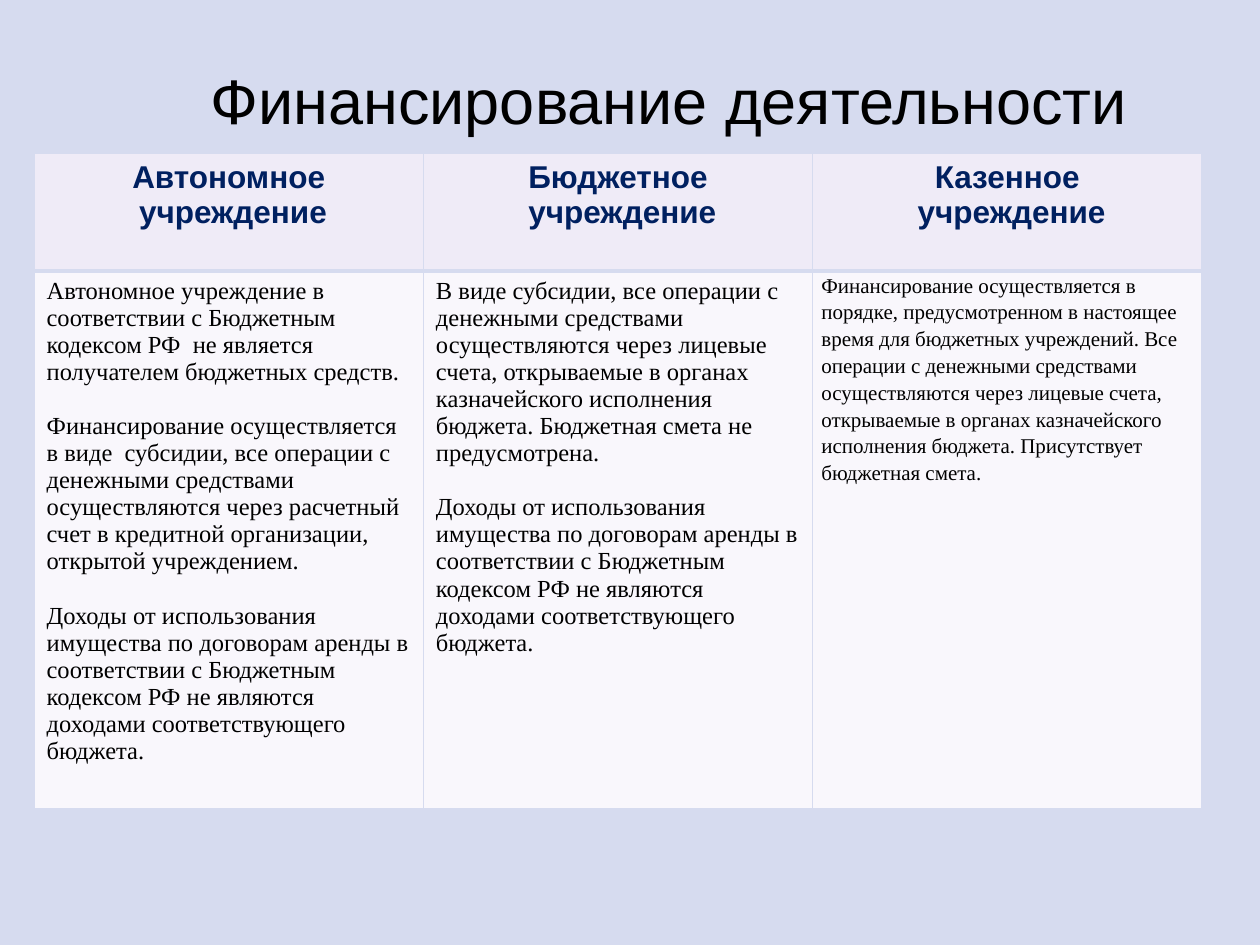
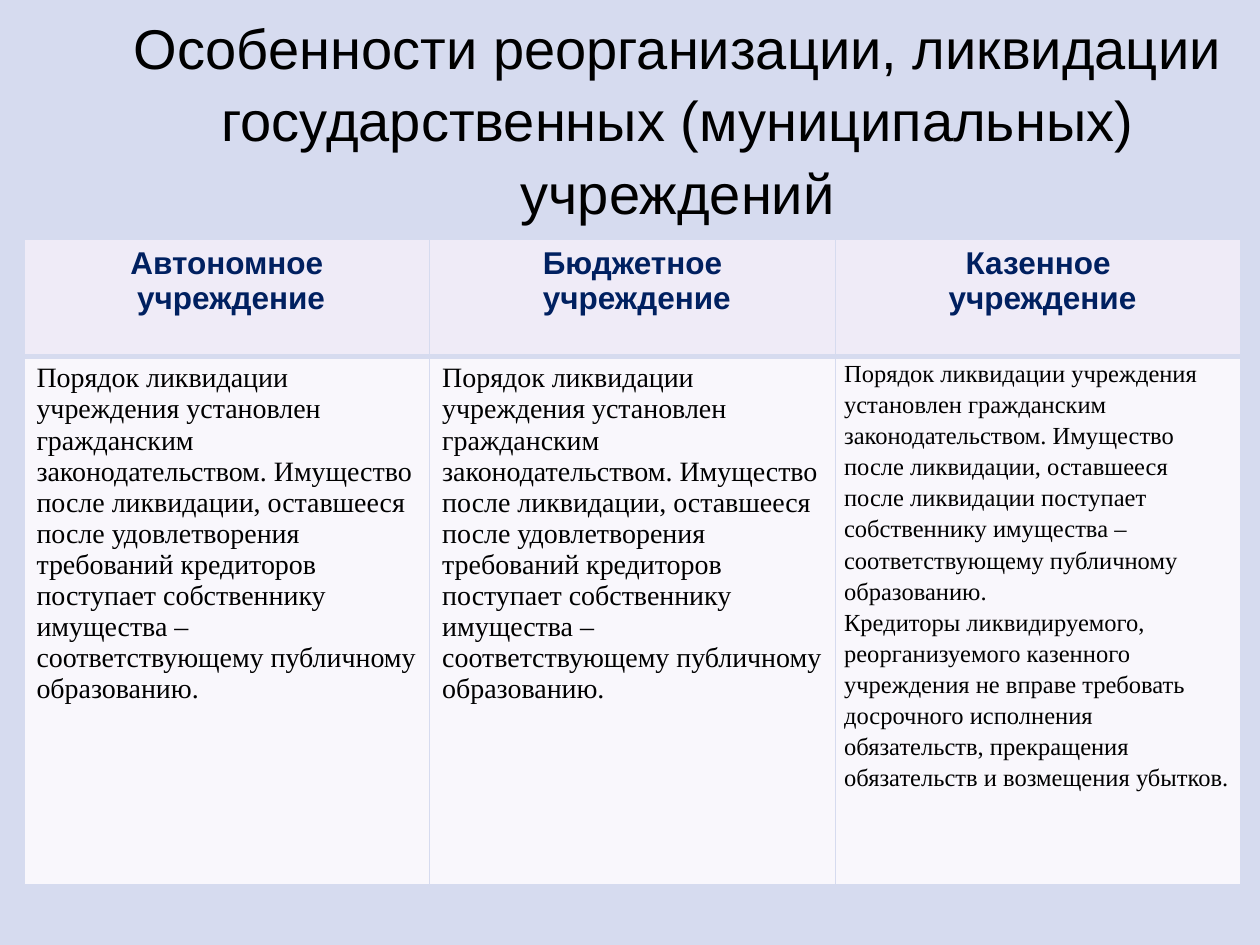
from lxml import etree
from pptx import Presentation
from pptx.dml.color import RGBColor
from pptx.enum.text import MSO_ANCHOR, PP_ALIGN
from pptx.oxml.ns import qn
from pptx.util import Inches, Pt

CENTER, LEFT = PP_ALIGN.CENTER, PP_ALIGN.LEFT
MIDDLE = MSO_ANCHOR.MIDDLE
BLANK_LAYOUT = 6
SLIDE_WIDTH, SLIDE_HEIGHT = Inches(10), Inches(7.5)
TITLE_LEFT, TITLE_TOP, TITLE_WIDTH = 0.88, 0.3, 9
HEADER_HEIGHT = 0.93
NARROW_MARGIN = 0.07
COLORS = {
    "background": "D6DBEF",
    "header": "EFEBF7",
    "body": "F9F7FC",
    "navy": "002060",
    "black": "000000",
}
HEADING_FONT, BODY_FONT = "Arial", "Times New Roman"
INSTITUTIONS = ["Автономное", "Бюджетное", "Казенное"]

INCOME = (
    "Доходы от использования имущества по договорам аренды в соответствии с "
    "Бюджетным кодексом РФ не являются доходами соответствующего бюджета."
)
FUNDING = [
    [
        "Автономное учреждение в соответствии с Бюджетным кодексом РФ  не является "
        "получателем бюджетных средств.",
        "Финансирование осуществляется в виде  субсидии, все операции с денежными "
        "средствами осуществляются через расчетный счет в кредитной организации, "
        "открытой учреждением.",
        INCOME,
    ],
    [
        "В виде субсидии, все операции с денежными средствами осуществляются через "
        "лицевые счета, открываемые в органах казначейского исполнения бюджета. "
        "Бюджетная смета не предусмотрена.",
        INCOME,
    ],
    [
        "Финансирование осуществляется в порядке, предусмотренном в настоящее время "
        "для бюджетных учреждений. Все операции с денежными средствами осуществляются "
        "через лицевые счета, открываемые в органах казначейского исполнения бюджета. "
        "Присутствует бюджетная смета.",
    ],
]
LIQUIDATION_RULE = (
    "Порядок ликвидации учреждения установлен гражданским законодательством. "
    "Имущество после ликвидации, оставшееся после {} поступает "
    "собственнику имущества – соответствующему публичному образованию."
)
CREDITORS_FIRST = LIQUIDATION_RULE.format("удовлетворения требований кредиторов")
LIQUIDATION = [
    [CREDITORS_FIRST],
    [CREDITORS_FIRST],
    [
        LIQUIDATION_RULE.format("ликвидации"),
        "Кредиторы ликвидируемого, реорганизуемого казенного учреждения не вправе "
        "требовать досрочного исполнения обязательств, прекращения обязательств и "
        "возмещения убытков.",
    ],
]


def write_paragraphs(text_frame, texts, font_name, size, color, bold=False,
                     alignment=LEFT, line_spacing=None, gap=0):
    """Fill a text frame with equally formatted paragraphs, gap points apart."""
    text_frame.text = "\n".join(texts)
    for index, paragraph in enumerate(text_frame.paragraphs):
        paragraph.alignment = alignment
        paragraph.line_spacing = line_spacing
        paragraph.space_before = Pt(gap if index else 0)
        for run in paragraph.runs:
            run.font.name = font_name
            run.font.size = Pt(size)
            run.font.bold = bold
            run.font.color.rgb = RGBColor.from_string(COLORS[color])


def add_titled_slide(presentation, title, size, height):
    """Add a slide with the shared background and a centred title."""
    slide = presentation.slides.add_slide(presentation.slide_layouts[BLANK_LAYOUT])
    fill = slide.background.fill
    fill.solid()
    fill.fore_color.rgb = RGBColor.from_string(COLORS["background"])
    box = slide.shapes.add_textbox(Inches(TITLE_LEFT), Inches(TITLE_TOP),
                                   Inches(TITLE_WIDTH), Inches(height))
    box.text_frame.word_wrap = True
    box.text_frame.vertical_anchor = MIDDLE
    write_paragraphs(box.text_frame, [title], HEADING_FONT, size, "black",
                     alignment=CENTER, line_spacing=1.08)
    return slide


def style_cell(cell, color, top=1, bottom=1):
    """Give a cell its borders, in points, and its fill."""
    properties = cell._tc.get_or_add_tcPr()
    for side, width in (("L", 1), ("R", 1), ("T", top), ("B", bottom)):
        line = etree.SubElement(properties, qn(f"a:ln{side}"), w=str(Pt(width)))
        solid = etree.SubElement(line, qn("a:solidFill"))
        etree.SubElement(solid, qn("a:srgbClr"), val=COLORS["background"])
    cell.fill.solid()
    cell.fill.fore_color.rgb = RGBColor.from_string(COLORS[color])


def add_comparison(slide, left, top, column_width, body_height, columns, size, gap=0):
    """Add a table that compares the three kinds of institution."""
    count = len(INSTITUTIONS)
    table = slide.shapes.add_table(
        2, count, Inches(left), Inches(top), Inches(column_width * count),
        Inches(HEADER_HEIGHT + body_height)).table
    table.horz_banding = False
    for row, height in zip(table.rows, (HEADER_HEIGHT, body_height)):
        row.height = Inches(height)
    for index, (institution, texts) in enumerate(zip(INSTITUTIONS, columns)):
        table.columns[index].width = Inches(column_width)
        header, body = table.cell(0, index), table.cell(1, index)
        style_cell(header, "header", bottom=3)
        style_cell(body, "body", top=3)
        write_paragraphs(header.text_frame, [institution, " учреждение"],
                         HEADING_FONT, 18, "navy", bold=True, alignment=CENTER)
        is_last = index == count - 1
        if is_last:
            body.margin_left = body.margin_right = Inches(NARROW_MARGIN)
            body.margin_top = body.margin_bottom = 0
        write_paragraphs(body.text_frame, texts, BODY_FONT,
                         size - 2 if is_last else size, "black",
                         line_spacing=1.15 if is_last else None, gap=gap)


def main():
    """Build and save the two comparison slides."""
    presentation = Presentation()
    presentation.slide_width, presentation.slide_height = SLIDE_WIDTH, SLIDE_HEIGHT

    funding = add_titled_slide(presentation, "Финансирование деятельности ", 36, 0.93)
    add_comparison(funding, 0.27, 1.22, 3.09, 3.97, FUNDING, 14, gap=15.5)

    liquidation = add_titled_slide(
        presentation,
        "Особенности реорганизации, ликвидации государственных "
        "(муниципальных) учреждений", 32, 1.25)
    add_comparison(liquidation, 0.19, 1.9, 3.22, 4.19, LIQUIDATION, 16)

    presentation.save("out.pptx")


if __name__ == "__main__":
    main()
